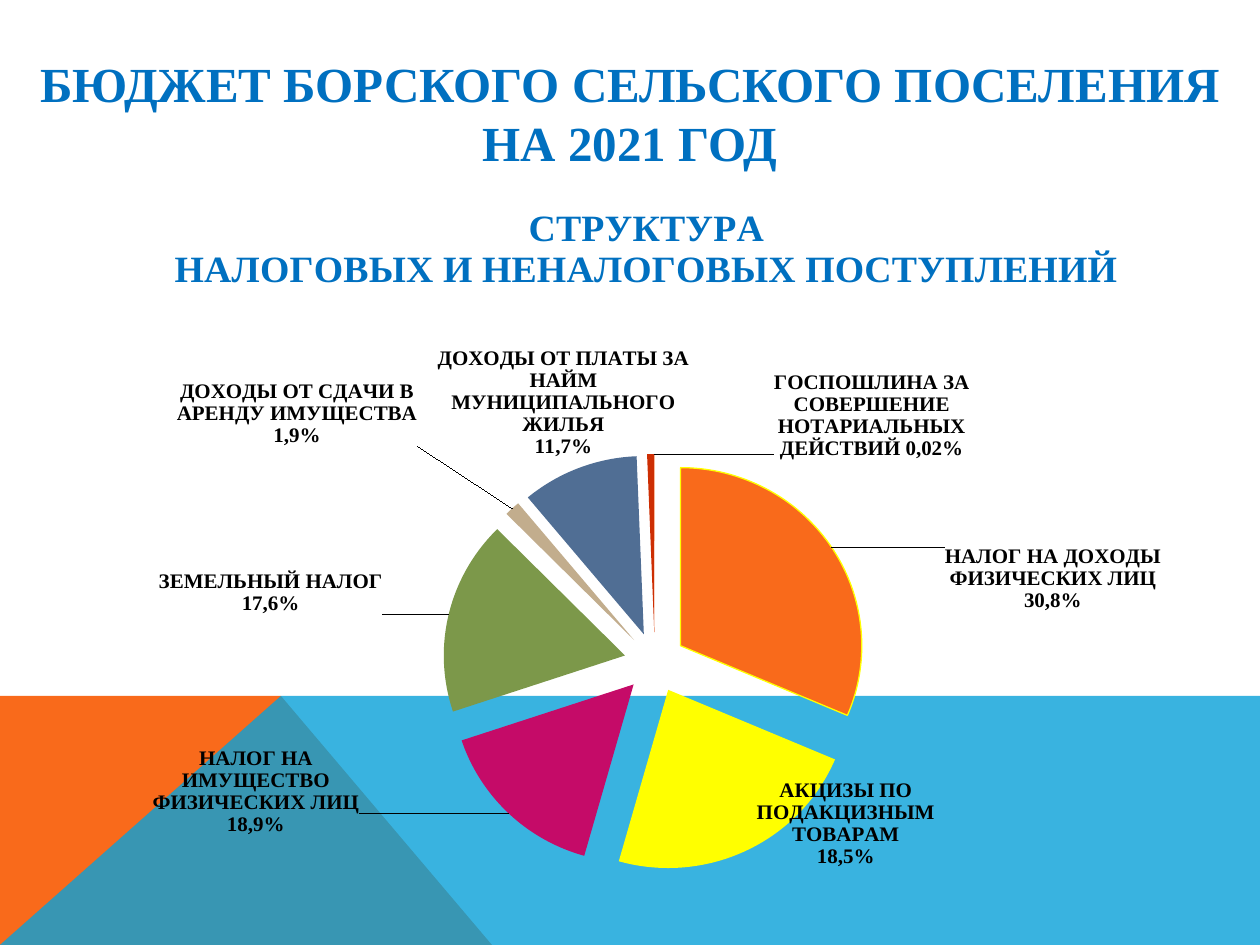
from lxml import etree
from pptx import Presentation
from pptx.chart.data import CategoryChartData
from pptx.dml.color import RGBColor
from pptx.enum.chart import XL_CHART_TYPE, XL_LABEL_POSITION
from pptx.enum.text import MSO_ANCHOR, PP_ALIGN
from pptx.oxml.ns import qn
from pptx.util import Emu, Pt

PIE = XL_CHART_TYPE.PIE
OUTSIDE = XL_LABEL_POSITION.OUTSIDE_END
CENTER, MIDDLE = PP_ALIGN.CENTER, MSO_ANCHOR.MIDDLE
EMU_PER_PX = 914400 / 126
TITLE_ONLY = 5

HEADING = "БЮДЖЕТ БОРСКОГО СЕЛЬСКОГО ПОСЕЛЕНИЯ НА 2021 ГОД"
CHART_TITLE = ["СТРУКТУРА", "НАЛОГОВЫХ И НЕНАЛОГОВЫХ ПОСТУПЛЕНИЙ"]
CHART_BOX = (1, 110, 1260, 835)
PIE_BOX = (443, 460, 424, 424)
CHART_TITLE_CORNER = (171, 203)

# value, fill, label lines, label shift from its default place in px
REVENUES = [
    (1958113, "F96A1B", ["НАЛОГ НА ДОХОДЫ ФИЗИЧЕСКИХ ЛИЦ", "30,8%"], (107, 69)),
    (1436132, "FFFF00", ["АКЦИЗЫ ПО ПОДАКЦИЗНЫМ ТОВАРАМ", "18,5%"], (7, -79)),
    (967563, "C50B68", ["НАЛОГ НА ИМУЩЕСТВО ФИЗИЧЕСКИХ ЛИЦ", "18,9%"], (-144, -72)),
    (1100427, "7C984A", ["ЗЕМЕЛЬНЫЙ НАЛОГ", "17,6%"], (-59, 2)),
    (86772, "C2AD8D", ["ДОХОДЫ ОТ СДАЧИ В АРЕНДУ ИМУЩЕСТВА", "1,9%"], (-90, -58)),
    (650862, "506E94", ["ДОХОДЫ ОТ ПЛАТЫ ЗА НАЙМ МУНИЦИПАЛЬНОГО ЖИЛЬЯ", "11,7%"], (113, -4)),
    (38156, "CD2E03", None, None),
    (1400, "F96A1B",
     ["ГОСПОШЛИНА ЗА СОВЕРШЕНИЕ НОТАРИАЛЬНЫХ ДЕЙСТВИЙ 0,02%"], (217, 13)),
]


def px(length):
    return Emu(round(length * EMU_PER_PX))


def color(value):
    return RGBColor.from_string(value)


def chart_element(tag, value=None):
    element = etree.Element(qn(f"c:{tag}"))
    if value is not None:
        element.set("val", str(value))
    return element


def manual_layout(x, y, width=None, height=None, inner=False, edge=True):
    """Chart layout from px; without edge, x and y are shifts from the default place."""
    layout = chart_element("layout")
    manual = etree.SubElement(layout, qn("c:manualLayout"))
    if inner:
        manual.append(chart_element("layoutTarget", "inner"))
    if edge:
        x, y = x - CHART_BOX[0], y - CHART_BOX[1]
        manual.extend([chart_element("xMode", "edge"), chart_element("yMode", "edge")])
    chart_width, chart_height = CHART_BOX[2:]
    for tag, length, total in (("x", x, chart_width), ("y", y, chart_height),
                               ("w", width, chart_width), ("h", height, chart_height)):
        if length is not None:
            manual.append(chart_element(tag, round(length / total, 4)))
    return layout


def replace_layout(parent, layout, index):
    for old in parent.findall(qn("c:layout")):
        parent.remove(old)
    parent.insert(index, layout)


class BudgetSlide:
    font = "Times New Roman"
    heading_color = "0070C0"

    def __init__(self, presentation):
        self.slide = presentation.slides.add_slide(presentation.slide_layouts[TITLE_ONLY])

    def add_lines(self, text_frame, lines, size, text_color):
        for number, line in enumerate(lines):
            paragraph = text_frame.paragraphs[0] if number == 0 else text_frame.add_paragraph()
            paragraph.alignment = CENTER
            run = paragraph.add_run()
            run.text = line
            run.font.name, run.font.size, run.font.bold = self.font, Pt(size), True
            run.font.color.rgb = color(text_color)

    def polygon(self, points, fill, opacity=100):
        builder = self.slide.shapes.build_freeform(*points[0], scale=EMU_PER_PX)
        builder.add_line_segments(points[1:], close=True)
        shape = builder.convert_to_shape()
        shape.shadow.inherit = False
        shape.fill.solid()
        shape.fill.fore_color.rgb = color(fill)
        shape.line.fill.background()
        if opacity < 100:
            rgb = shape._element.spPr.find(".//" + qn("a:srgbClr"))
            etree.SubElement(rgb, qn("a:alpha")).set("val", str(opacity * 1000))

    def title(self, text, left, top, width, height):
        shape = self.slide.shapes.title
        shape.left, shape.top, shape.width, shape.height = map(px, (left, top, width, height))
        frame = shape.text_frame
        frame.word_wrap, frame.vertical_anchor = True, MIDDLE
        self.add_lines(frame, [text], 28, self.heading_color)
        self.slide.shapes._spTree.append(shape._element)  # above the backdrop

    def pie(self):
        data = CategoryChartData(number_format="#,##0")
        data.categories = [str(number + 1) for number in range(len(REVENUES))]
        data.add_series("\n".join(CHART_TITLE), [revenue[0] for revenue in REVENUES])
        chart = self.slide.shapes.add_chart(PIE, *map(px, CHART_BOX), data).chart
        chart.font.name, chart.font.size = "Roboto", Pt(18)
        chart.font.color.rgb = color("000000")
        chart.has_legend = False
        self.add_lines(chart.chart_title.text_frame, CHART_TITLE, 21.6, self.heading_color)
        replace_layout(chart.chart_title._element, manual_layout(*CHART_TITLE_CORNER), 1)

        plot = chart.plots[0]
        plot.vary_by_categories = True
        plot_area = plot._element.getparent()
        replace_layout(plot_area, manual_layout(*PIE_BOX, inner=True), 0)

        series = plot.series[0]
        labels = series.data_labels
        labels.show_value = True
        labels.number_format, labels.number_format_is_linked = "#,##0", False
        labels.position = OUTSIDE
        labels.font.name, labels.font.size, labels.font.bold = self.font, Pt(12), True
        for number, (_, fill, lines, shift) in enumerate(REVENUES):
            point = series.points[number]
            point.format.fill.solid()
            point.format.fill.fore_color.rgb = color(fill)
            point.format.line.fill.background()
            self.label(point.data_label, labels._element, lines, shift)
        outline = series.points[0].format.line
        outline.color.rgb = color("FFFF00")
        outline.width = Pt(0.75)
        series._element.find(qn("c:dPt")).addprevious(chart_element("explosion", 17))
        for leader in labels._element.findall(qn("c:showLeaderLines")):
            labels._element.remove(leader)
        labels._element.append(chart_element("showLeaderLines", 1))

    def label(self, data_label, labels_element, lines, shift):
        """Fill and move a slice label, or switch it off when it has no lines."""
        data_label.position = OUTSIDE
        element = labels_element.findall(qn("c:dLbl"))[-1]
        if lines:
            self.add_lines(data_label.text_frame, lines, 12, "000000")
            replace_layout(element, manual_layout(*shift, edge=False), 1)
        else:
            for child in list(element)[1:]:
                element.remove(child)
            element.append(chart_element("delete", 1))


def main():
    presentation = Presentation()
    presentation.slide_width, presentation.slide_height = px(1260), px(945)
    budget = BudgetSlide(presentation)
    budget.polygon([(0, 945), (0, 696), (281, 696), (492, 945)], "F96A1B")
    budget.polygon([(0, 945), (281, 696), (1260, 696), (1260, 945)], "08A1D9", opacity=80)
    budget.title(HEADING, 15, 50, 1230, 125)
    budget.pie()
    presentation.save("out.pptx")


if __name__ == "__main__":
    main()
